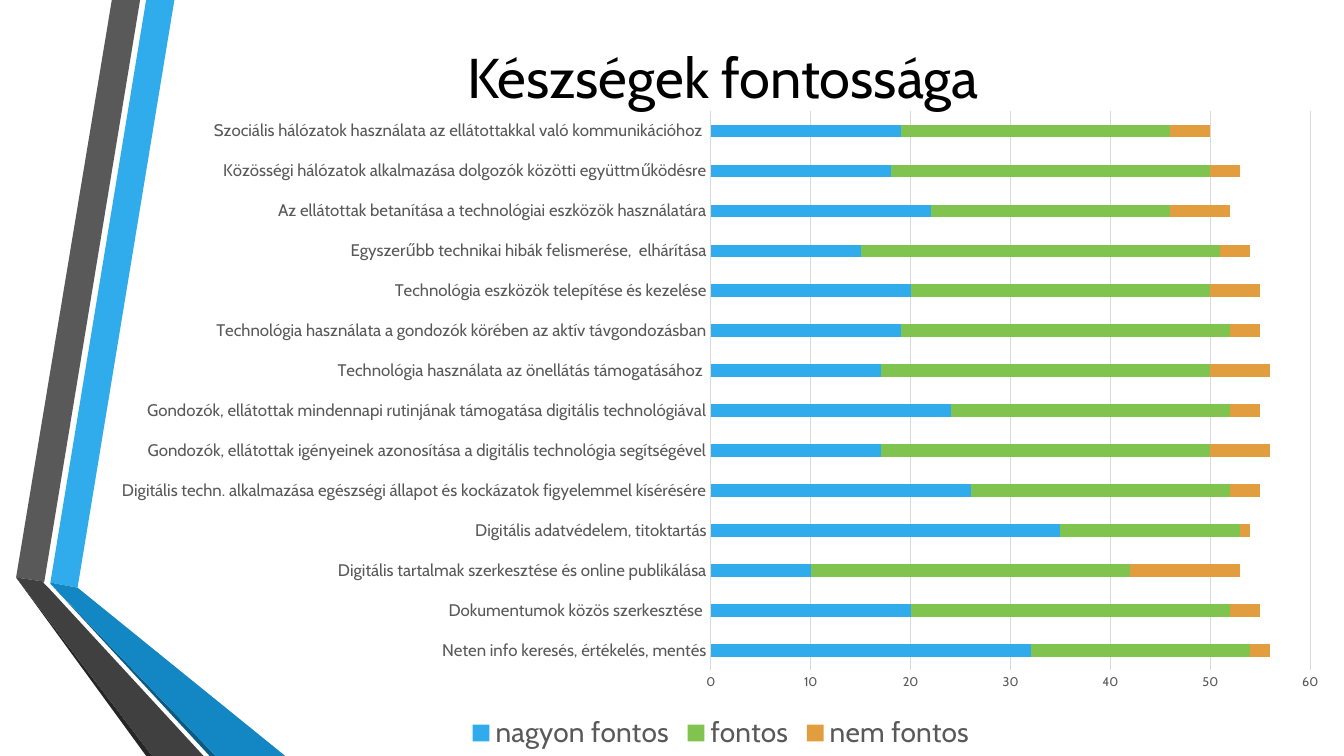
from pptx import Presentation
from pptx.chart.data import CategoryChartData
from pptx.dml.color import RGBColor
from pptx.enum.chart import XL_CHART_TYPE, XL_LEGEND_POSITION, XL_TICK_MARK
from pptx.enum.text import MSO_ANCHOR, PP_ALIGN
from pptx.oxml import parse_xml
from pptx.oxml.ns import nsdecls, qn
from pptx.util import Inches, Pt

RIBBONS = [
    ("30ACEC", [(0.5, 5.78), (0.77, 5.83), (1.73, 0), (1.45, 0)]),
    ("595959", [(1.39, 0), (1.11, 0), (0.16, 5.73), (0.44, 5.77)]),
    ("262626", [(0.16, 5.73), (1.45, 7.5), (1.51, 7.5)]),
    ("0C5A82", [(0.5, 5.79), (2.08, 7.5), (2.14, 7.5)]),
    ("1287C3", [(0.5, 5.79), (2.14, 7.5), (2.83, 7.5), (0.77, 5.83), (0.5, 5.78)]),
    ("404040", [(2.02, 7.5), (0.48, 5.83), (0.43, 5.78), (0.44, 5.77),
                (0.16, 5.73), (1.51, 7.5)]),
]

# Skill, followed by the answers in the order of ANSWERS
ANSWERS = [("nagyon fontos", "30ACEC"), ("fontos", "80C34F"), ("nem fontos", "E29D3E")]
SKILLS = [
    ("Neten info keresés, értékelés, mentés", 32, 22, 2),
    ("Dokumentumok közös szerkesztése ", 20, 32, 3),
    ("Digitális tartalmak szerkesztése és online publikálása", 10, 32, 11),
    ("Digitális adatvédelem, titoktartás", 35, 18, 1),
    ("Digitális techn. alkalmazása egészségi állapot és kockázatok figyelemmel kísérésére",
     26, 26, 3),
    ("Gondozók, ellátottak igényeinek azonosítása a digitális technológia segítségével",
     17, 33, 6),
    ("Gondozók, ellátottak mindennapi rutinjának támogatása digitális technológiával",
     24, 28, 3),
    ("Technológia használata az önellátás támogatásához ", 17, 33, 6),
    ("Technológia használata a gondozók körében az aktív távgondozásban", 19, 33, 3),
    ("Technológia eszközök telepítése és kezelése", 20, 30, 5),
    ("Egyszerűbb technikai hibák felismerése,  elhárítása", 15, 36, 3),
    ("Az ellátottak betanítása a technológiai eszközök használatára", 22, 24, 6),
    ("Közösségi hálózatok alkalmazása dolgozók közötti együttműködésre", 18, 32, 3),
    ("Szociális hálózatok használata az ellátottakkal való kommunikációhoz ", 19, 27, 4),
]


def color(value):
    return RGBColor.from_string(value)


class SlideBuilder:
    font_name = "Cabin"
    title_color = "000000"
    label_color = "595959"
    line_color = "D9D9D9"

    def __init__(self, page):
        self.page = page

    def style_font(self, font, size, value):
        font.name = self.font_name
        font.size = Pt(size)
        font.color.rgb = color(value)

    def style_line(self, line):
        line.color.rgb = color(self.line_color)
        line.width = Pt(0.75)

    def ribbon(self, fill, points):
        corners = [(Inches(x), Inches(y)) for x, y in points]
        builder = self.page.shapes.build_freeform(*corners[0])
        builder.add_line_segments(corners[1:], close=True)
        shape = builder.convert_to_shape()
        shape.shadow.inherit = False
        shape.fill.solid()
        shape.fill.fore_color.rgb = color(fill)
        shape.line.fill.background()

    def title(self, text, left, top, width, height):
        box = self.page.shapes.add_textbox(
            Inches(left), Inches(top), Inches(width), Inches(height))
        frame = box.text_frame
        frame.word_wrap = True
        frame.vertical_anchor = MSO_ANCHOR.MIDDLE
        frame.text = text
        para = frame.paragraphs[0]
        para.alignment = PP_ALIGN.CENTER
        self.style_font(para.runs[0].font, 40, self.title_color)

    def stacked_bars(self, skills, answers, left, top, width, height):
        data = CategoryChartData(number_format="General")
        names, *columns = zip(*skills)
        data.categories = names
        for (answer, _), values in zip(answers, columns):
            data.add_series(answer, values)
        chart = self.page.shapes.add_chart(
            XL_CHART_TYPE.BAR_STACKED, Inches(left), Inches(top),
            Inches(width), Inches(height), data).chart
        chart.has_title = False
        self.style_font(chart.font, 10, self.title_color)

        plot = chart.plots[0]
        plot.gap_width = 219
        plot.overlap = 100
        plot.vary_by_categories = False
        for series, (_, fill) in zip(plot.series, answers):
            series.format.fill.solid()
            series.format.fill.fore_color.rgb = color(fill)
            series.invert_if_negative = False

        for axis, size in ((chart.category_axis, 12), (chart.value_axis, 9)):
            axis.major_tick_mark = XL_TICK_MARK.NONE
            axis.minor_tick_mark = XL_TICK_MARK.NONE
            self.style_font(axis.tick_labels.font, size, self.label_color)
        chart.category_axis.has_major_gridlines = False
        self.style_line(chart.category_axis.format.line)
        value_axis = chart.value_axis
        value_axis.minimum_scale, value_axis.maximum_scale = 0, 60
        value_axis.major_unit = 10
        value_axis.format.line.fill.background()
        value_axis.has_major_gridlines = True
        self.style_line(value_axis.major_gridlines.format.line)

        chart.has_legend = True
        chart.legend.position = XL_LEGEND_POSITION.BOTTOM
        chart.legend.include_in_layout = False
        self.style_font(chart.legend.font, 20, self.label_color)
        self.place_plot(chart, x=0.492, y=0.02, w=0.481, h=0.85)

    def place_plot(self, chart, **fractions):
        """Fix the inner plot area as fractions of the chart's size."""
        area = chart._chartSpace.find(".//" + qn("c:plotArea"))
        for layout in area.findall(qn("c:layout")):
            area.remove(layout)
        sizes = "".join(f'<c:{key} val="{value}"/>' for key, value in fractions.items())
        area.insert(0, parse_xml(
            f'<c:layout {nsdecls("c")}><c:manualLayout><c:layoutTarget val="inner"/>'
            '<c:xMode val="edge"/><c:yMode val="edge"/>'
            f'{sizes}</c:manualLayout></c:layout>'))


def main():
    deck = Presentation()
    deck.slide_width, deck.slide_height = Inches(13.33), Inches(7.5)
    builder = SlideBuilder(deck.slides.add_slide(deck.slide_layouts[6]))
    for fill, points in RIBBONS:
        builder.ribbon(fill, points)
    builder.title("Készségek fontossága", 1.69, -0.21, 10.96, 1.92)
    builder.stacked_bars(SKILLS, ANSWERS, 0.97, 0.97, 12.36, 6.53)
    deck.save("out.pptx")


if __name__ == "__main__":
    main()
